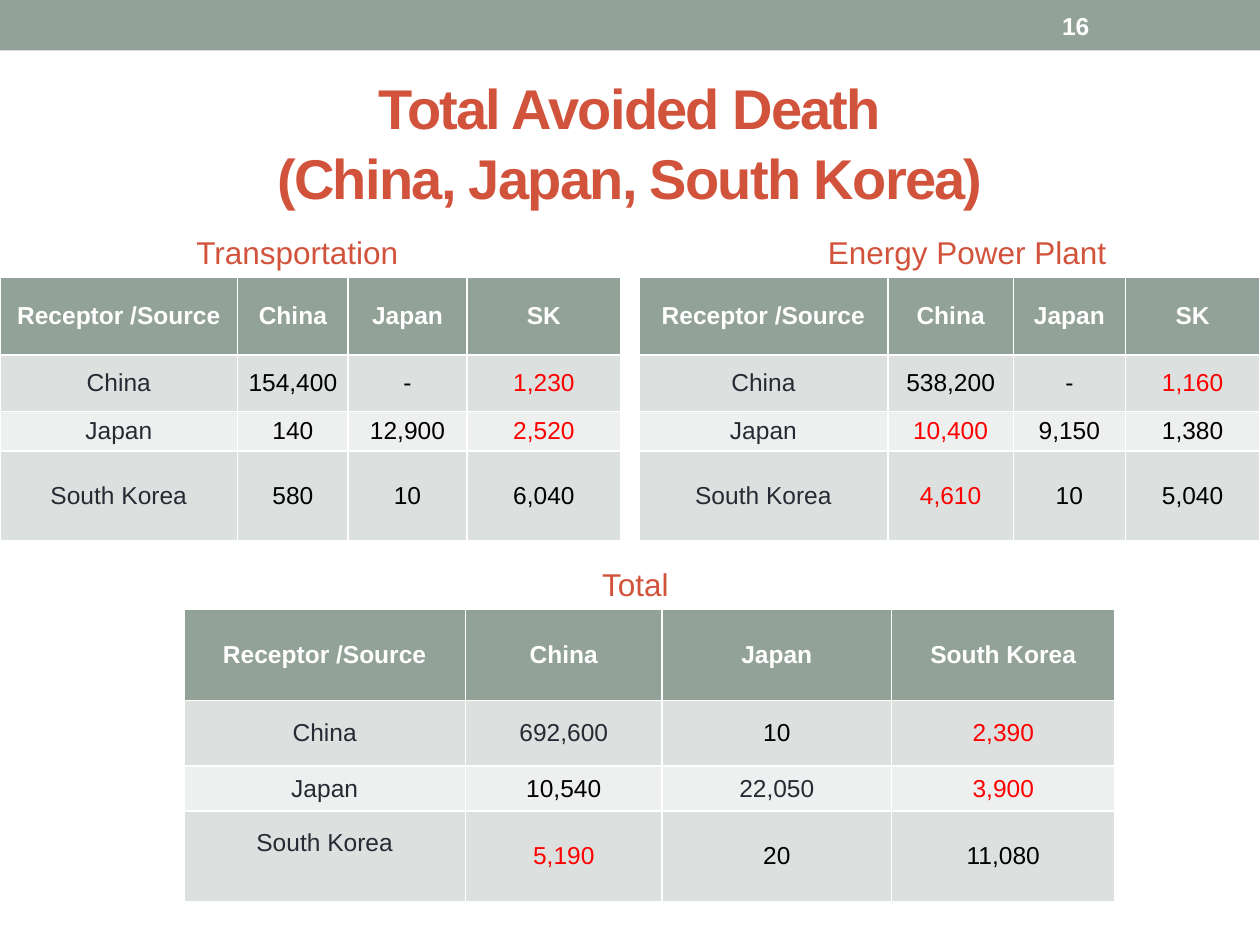
from pptx import Presentation
from pptx.dml.color import RGBColor
from pptx.enum import shapes, text
from pptx.util import Cm, Pt

SAGE, RUST, INK, WHITE = "93A299", "D2533C", "292934", "FFFFFF"
BANDS = ["DCE0DE", "EEF0EF"]
RED_CELLS = {"1,230", "2,520", "1,160", "10,400", "4,610",
             "2,390", "3,900", "5,190"}
INK_CELLS = {"692,600", "22,050"}
MID = text.MSO_ANCHOR.MIDDLE


def color(code):
    return RGBColor.from_string(code)


def style(para, size, code, bold=False, align=None):
    font = para.font
    font.name, font.size, font.bold = "Arial", Pt(size), bold
    font.color.rgb = color(code)
    para.alignment = align


def add_label(slide, box, words, size, code, bold=False, anchor=None):
    frame = slide.shapes.add_textbox(*map(Cm, box)).text_frame
    frame.word_wrap = True
    frame.vertical_anchor = anchor
    frame.text = words
    style(frame.paragraphs[0], size, code, bold)


def add_banner(slide, box, number):
    left, top, width, height = box
    bar = slide.shapes.add_shape(shapes.MSO_SHAPE.RECTANGLE, *map(Cm, box))
    bar.shadow.inherit = False
    bar.fill.solid()
    bar.fill.fore_color.rgb = color(SAGE)
    bar.line.fill.background()
    add_label(slide, (left + width - 4.24, top + 0.05, 2.97, height - 0.1),
              number, 14, WHITE, True, MID)


def set_title(slide, box, words):
    title = slide.shapes.title
    title.left, title.top, title.width, title.height = map(Cm, box)
    frame = title.text_frame
    frame.auto_size = text.MSO_AUTO_SIZE.NONE
    frame.vertical_anchor = MID
    frame.text = words
    para = frame.paragraphs[0]
    para.line_spacing = 1.04
    style(para, 32, RUST, True, text.PP_ALIGN.CENTER)
    for run in para.runs:
        run._r.get_or_add_rPr().set("spc", "-100")


def fill_cell(cell, words, row, col):
    head = row == 0
    wide = head or col == 0
    cell.margin_left = cell.margin_right = Cm(0.33 if wide else 0.03)
    cell.margin_top = cell.margin_bottom = Cm(0.08 if wide else 0.02)
    cell.vertical_anchor = MID
    cell.fill.solid()
    cell.fill.fore_color.rgb = color(SAGE if head else BANDS[(row - 1) % 2])
    cell.text = words
    if head:
        tint = WHITE
    elif words in RED_CELLS:
        tint = "FF0000"
    else:
        tint = INK if col == 0 or words in INK_CELLS else "000000"
    style(cell.text_frame.paragraphs[0], 14, tint, head, text.PP_ALIGN.CENTER)


def add_grid(slide, box, name, shift, cols, rows, cells):
    """Table in the box, with its name above, shifted from the left edge."""
    left, top, width, height = box
    add_label(slide, (left + shift, top - 1.02, 6.5, 1.02), name, 18, RUST)
    grid = slide.shapes.add_table(len(rows), len(cols), *map(Cm, box)).table
    for col, size in zip(grid.columns, cols):
        col.width = Cm(size)
    for row, size in zip(grid.rows, rows):
        row.height = Cm(size)
    for r, line in enumerate(cells):
        for c, words in enumerate(line):
            fill_cell(grid.cell(r, c), words, r, c)
    return grid


def main():
    deck = Presentation()
    deck.slide_width, deck.slide_height = Cm(25.4), Cm(19.05)
    slide = deck.slides.add_slide(deck.slide_layouts[5])
    add_banner(slide, (0, 0, 25.4, 1.02), "16")
    set_title(slide, (1.27, 1.47, 22.86, 2.74),
              "Total Avoided Death\v(China, Japan, South Korea)")

    head = ["Receptor /Source", "China", "Japan"]
    rows = [1.57, 1.14, 0.79, 1.81]
    add_grid(slide, (0, 5.59, 12.52, 5.31), "Transportation", 3.71,
             [4.79, 2.23, 2.39, 3.11], rows, [
                 head + ["SK"],
                 ["China", "154,400", "-", "1,230"],
                 ["Japan", "140", "12,900", "2,520"],
                 ["South Korea", "580", "10", "6,040"]])
    add_grid(slide, (12.88, 5.59, 12.52, 5.31), "Energy Power Plant", 3.56,
             [5.02, 2.53, 2.26, 2.71], rows, [
                 head + ["SK"],
                 ["China", "538,200", "-", "1,160"],
                 ["Japan", "10,400", "9,150", "1,380"],
                 ["South Korea", "4,610", "10", "5,040"]])
    total = add_grid(slide, (3.71, 12.29, 18.77, 5.89), "Total", 8.18,
                     [5.67, 3.97, 4.62, 4.51], [1.83, 1.32, 0.91, 1.83], [
                         head + ["South Korea"],
                         ["China", "692,600", "10", "2,390"],
                         ["Japan", "10,540", "22,050", "3,900"],
                         ["South Korea", "5,190", "20", "11,080"]])
    total.cell(3, 0).margin_bottom = Cm(0.64)
    deck.save("out.pptx")


if __name__ == "__main__":
    main()
